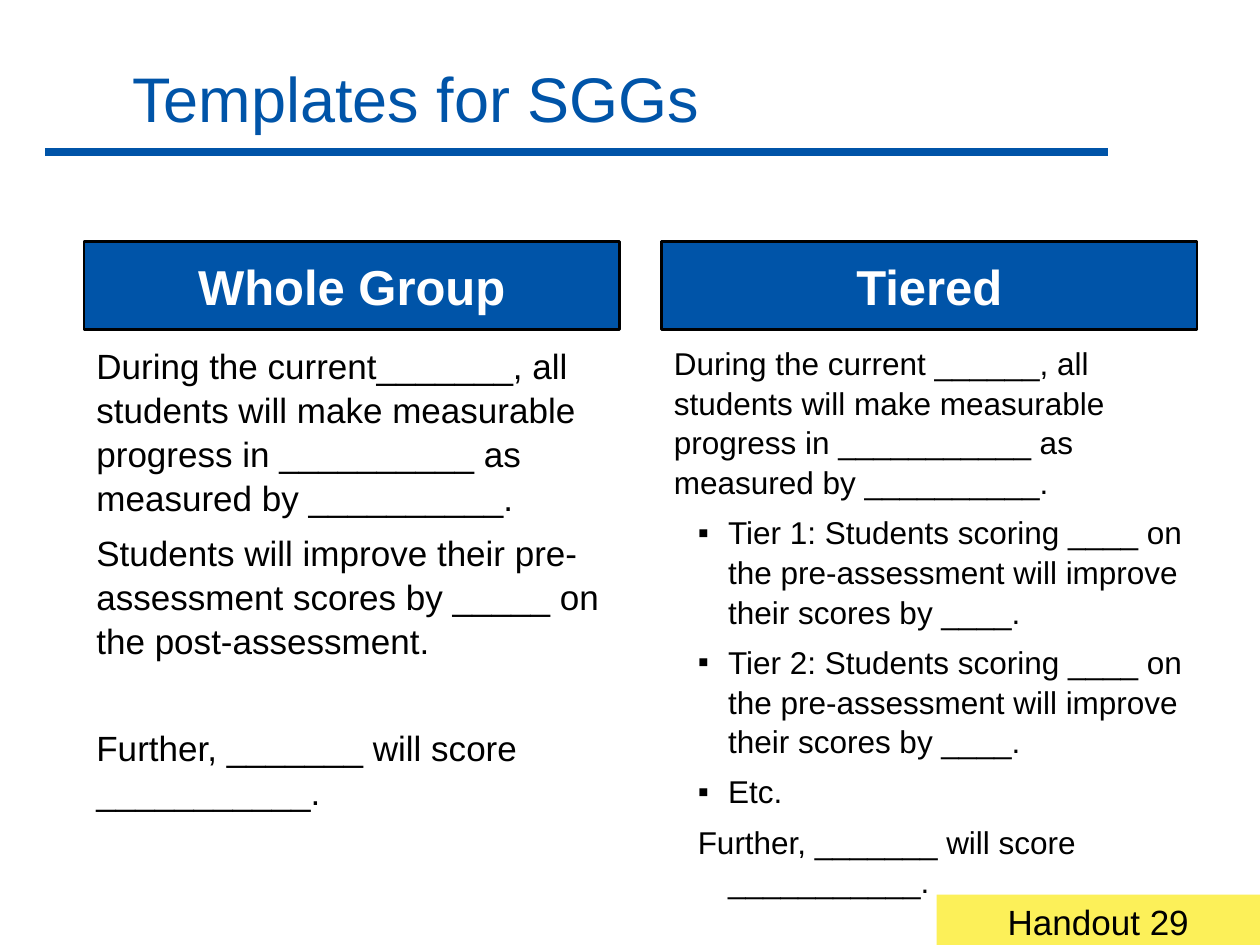
from lxml import etree
from pptx import Presentation
from pptx.dml.color import RGBColor
from pptx.enum.shapes import MSO_CONNECTOR, MSO_SHAPE
from pptx.enum.text import MSO_ANCHOR, PP_ALIGN
from pptx.oxml.ns import qn
from pptx.util import Inches, Pt

BLUE = RGBColor(0x00, 0x54, 0xA8)
YELLOW = RGBColor(0xFC, 0xF0, 0x59)
BLACK = RGBColor(0x00, 0x00, 0x00)
WHITE = RGBColor(0xFF, 0xFF, 0xFF)
RECTANGLE, STRAIGHT = MSO_SHAPE.RECTANGLE, MSO_CONNECTOR.STRAIGHT
TOP, MIDDLE, BOTTOM = MSO_ANCHOR.TOP, MSO_ANCHOR.MIDDLE, MSO_ANCHOR.BOTTOM
LEFT, CENTER = PP_ALIGN.LEFT, PP_ALIGN.CENTER

COLUMNS, ROWS = 120, 90
COLUMN_LEFTS, COLUMN_WIDTH = (8, 63), 51
HEADING_ROW, BODY_ROW = 23, 32
PLAIN, HANGING, BULLET = "plain", "hanging", "bullet"


class Page:
    """A slide on a 120 by 90 grid, with its house style."""

    font_name = "Arial"
    line_spacing = 1.05
    gap = 3

    def __init__(self, deck):
        self.slide = deck.slides.add_slide(deck.slide_layouts[6])
        self.column = deck.slide_width / COLUMNS
        self.row = deck.slide_height / ROWS

    def place(self, left, top, width, height):
        return (round(left * self.column), round(top * self.row),
                round(width * self.column), round(height * self.row))

    def rule(self, left, right, row, color, weight):
        x, y, width, _ = self.place(left, row, right - left, 0)
        line = self.slide.shapes.add_connector(STRAIGHT, x, y, x + width, y)
        line.line.color.rgb = color
        line.line.width = Pt(weight)
        etree.SubElement(line._element.spPr, qn("a:effectLst"))

    def text(self, area, anchor=TOP):
        box = self.slide.shapes.add_textbox(*self.place(*area))
        return self.prepare(box, anchor)

    def panel(self, area, fill, outline=None, anchor=TOP):
        box = self.slide.shapes.add_shape(RECTANGLE, *self.place(*area))
        box.shadow.inherit = False
        box.fill.solid()
        box.fill.fore_color.rgb = fill
        if outline is None:
            box.line.fill.background()
        else:
            box.line.color.rgb = outline
            box.line.width = Pt(1.5)
        return self.prepare(box, anchor)

    def prepare(self, box, anchor):
        frame = box.text_frame
        frame.word_wrap = True
        frame.vertical_anchor = anchor
        return frame

    def label(self, frame, words, size, color=BLACK, align=LEFT, bold=False):
        para = frame.paragraphs[0]
        para.alignment = align
        self.add_span(para, words, size, color, bold)

    def add_span(self, para, words, size, color, bold=False):
        span = para.add_run()
        span.text = words
        span.font.name = self.font_name
        span.font.size = Pt(size)
        span.font.bold = bold
        span.font.color.rgb = color

    def body(self, area, size, items):
        """Set (style, extra space before in points, words) items as paragraphs."""
        frame = self.text(area)
        for index, (style, extra, words) in enumerate(items):
            para = frame.add_paragraph() if index else frame.paragraphs[0]
            if style != PLAIN:
                self.hang(para, "▪" if style == BULLET else None)
            para.line_spacing = self.line_spacing
            para.space_before = Pt(self.gap + extra if index else 0)
            para.space_after = Pt(self.gap)
            self.add_span(para, words, size, BLACK)

    def hang(self, para, mark):
        properties = para._p.get_or_add_pPr()
        properties.set("marL", str(Inches(0.43)))
        properties.set("indent", str(Inches(-0.24)))
        if mark:
            etree.SubElement(properties, qn("a:buFont"), typeface=self.font_name)
            etree.SubElement(properties, qn("a:buChar"), char=mark)


def main():
    deck = Presentation()
    deck.slide_width, deck.slide_height = Inches(10), Inches(7.5)
    page = Page(deck)

    page.rule(4.3, 105.5, 14.5, BLUE, 4.5)

    further = "Further, _______ will score ___________."
    tier = ("Tier {}: Students scoring ____ on the pre-assessment "
            "will improve their scores by ____.")
    whole_group = [
        (PLAIN, 0, "During the current_______, all students will make measurable "
                   "progress in __________ as measured by __________."),
        (PLAIN, 0, "Students will improve their pre-assessment scores by _____ "
                   "on the post-assessment."),
        (PLAIN, 30, further),
    ]
    tiered = [
        (PLAIN, 0, "During the current ______, all students will make measurable "
                   "progress in ___________ as measured by __________."),
        *((BULLET, 0, tier.format(number)) for number in (1, 2)),
        (BULLET, 0, "Etc."),
        (HANGING, 0, further),
    ]
    columns = (("Whole Group", 20, 47, whole_group), ("Tiered", 18, 53.3, tiered))
    for left, (heading, size, height, items) in zip(COLUMN_LEFTS, columns):
        page.body((left, BODY_ROW, COLUMN_WIDTH, height), size, items)
        panel = page.panel((left, HEADING_ROW, COLUMN_WIDTH, 8.4), BLUE, BLACK, MIDDLE)
        page.label(panel, heading, 28, WHITE, CENTER, bold=True)

    title = page.text((11.4, 0, 108.6, 13.5), BOTTOM)
    page.label(title, "Templates for SGGs", 36, BLUE)

    handout = page.panel((89.2, 85.2, 30.8, 5.25), YELLOW)
    page.label(handout, "Handout 29", 20, align=CENTER)

    deck.save("out.pptx")


if __name__ == "__main__":
    main()
